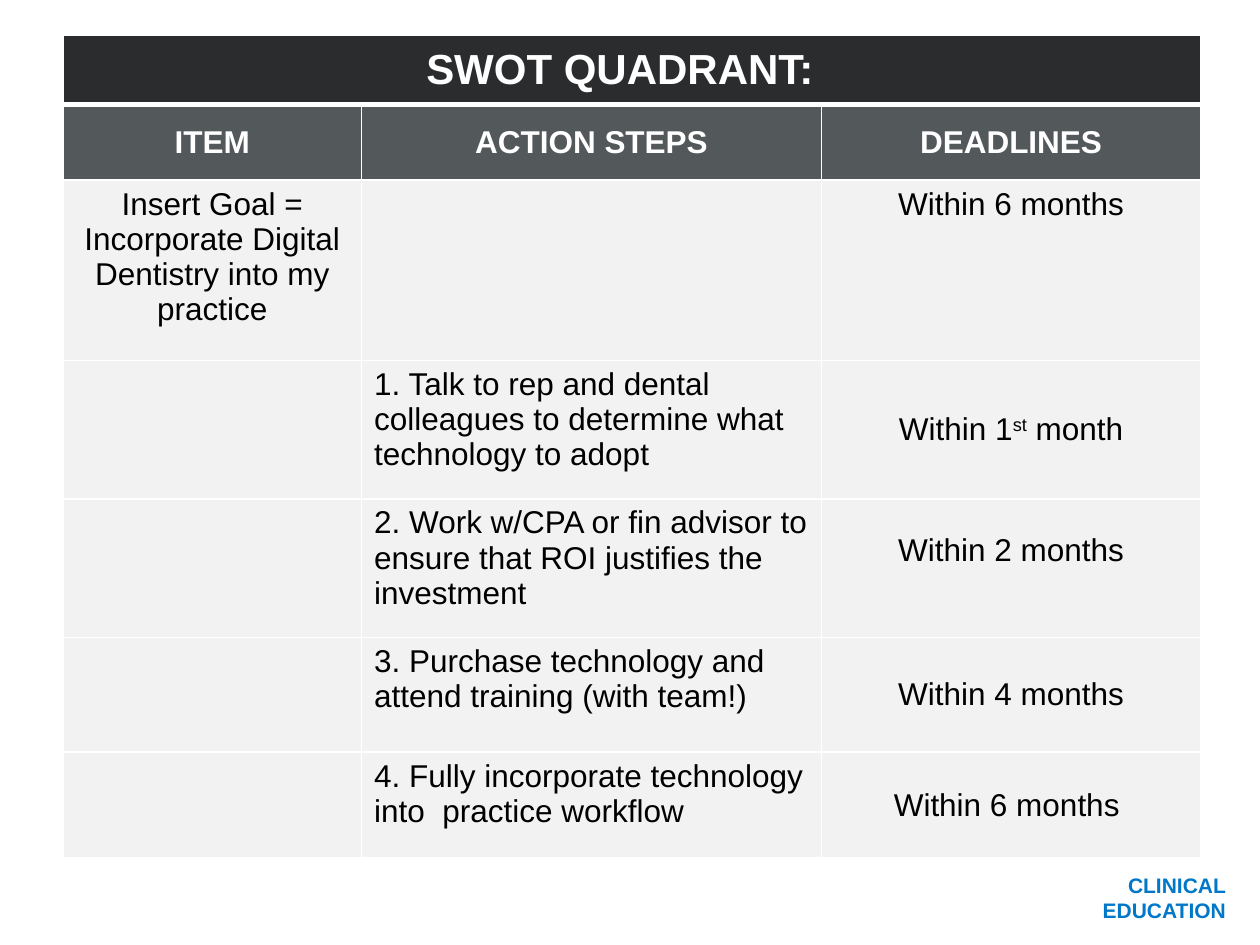
from lxml.etree import SubElement
from pptx import Presentation
from pptx.dml.color import RGBColor
from pptx.enum.text import MSO_ANCHOR, PP_ALIGN
from pptx.oxml.ns import qn
from pptx.util import Inches, Pt

WHITE = RGBColor(0xFF, 0xFF, 0xFF)
BLACK = RGBColor(0x00, 0x00, 0x00)
CHARCOAL = RGBColor(0x2A, 0x2C, 0x2E)
SLATE = RGBColor(0x53, 0x58, 0x5B)
PALE = RGBColor(0xF2, 0xF2, 0xF2)
BLUE = RGBColor(0x00, 0x77, 0xC8)

COLUMNS = [2.37, 3.65, 3.01]
HEIGHTS = [0.55, 0.6, 1.43, 1.1, 1.1, 0.91, 0.84]
ROWS = [
    ["SWOT QUADRANT:", "", ""],
    ["ITEM", "ACTION STEPS", "DEADLINES"],
    ["Insert Goal = Incorporate Digital Dentistry into my practice", "",
     "Within 6 months"],
    ["", "1. Talk to rep and dental colleagues to determine what technology "
     "to adopt", "Within 1^st^ month"],
    ["", "2. Work w/CPA or fin advisor to ensure that ROI justifies the "
     "investment", "Within 2 months"],
    ["", "3. Purchase technology and attend training (with team!)",
     "Within 4 months"],
    ["", "4. Fully incorporate technology into  practice workflow",
     "Within 6 months"],
]


def style_font(font, size, color, bold):
    font.name = "Arial"
    font.size = Pt(size)
    font.bold = bold
    font.color.rgb = color


def add_borders(cell, top, bottom):
    """Draw white borders; top and bottom are widths in points."""
    tc_pr = cell._tc.get_or_add_tcPr()
    for side, width in zip("LRTB", (1, 1, top, bottom)):
        ln = SubElement(tc_pr, qn(f"a:ln{side}"), w=str(Pt(width)))
        fill = SubElement(ln, qn("a:solidFill"))
        SubElement(fill, qn("a:srgbClr"), val=str(WHITE))


prs = Presentation()
prs.slide_width, prs.slide_height = Inches(10), Inches(7.5)
s = prs.slides.add_slide(prs.slide_layouts[6])

# Footer
footer = s.shapes.add_textbox(Inches(5.12), Inches(6.92), Inches(4.61), Inches(0.41))
tf = footer.text_frame
tf.word_wrap = True
tf.vertical_anchor = MSO_ANCHOR.MIDDLE
tf.margin_left = tf.margin_right = tf.margin_top = tf.margin_bottom = 0
tf.text = "CLINICAL\nEDUCATION"
for p in tf.paragraphs:
    p.alignment = PP_ALIGN.RIGHT
    style_font(p.font, 12, BLUE, True)

# Action plan table
table = s.shapes.add_table(len(ROWS), len(COLUMNS), Inches(0.5), Inches(0.28),
                           Inches(sum(COLUMNS)), Inches(sum(HEIGHTS))).table
for column, width in zip(table.columns, COLUMNS):
    column.width = Inches(width)
for row, height in zip(table.rows, HEIGHTS):
    row.height = Inches(height)
table.cell(0, 0).merge(table.cell(0, 2))

for i, texts in enumerate(ROWS):
    header = i < 2
    for j, text in enumerate(texts):
        cell = table.cell(i, j)
        add_borders(cell, 3 if i == 1 else 1, 3 if i == 0 else 1)
        cell.fill.solid()
        cell.fill.fore_color.rgb = (CHARCOAL, SLATE)[i] if header else PALE
        if header or (j == 2 and i > 2):
            cell.vertical_anchor = MSO_ANCHOR.MIDDLE
        p = cell.text_frame.paragraphs[0]
        p.alignment = PP_ALIGN.LEFT if j == 1 and not header else PP_ALIGN.CENTER
        style_font(p.font, 24 if i == 0 else 18, WHITE if header else BLACK, header)
        # Text between carets is superscript
        for k, part in enumerate(text.split("^") if text else []):
            r = p.add_run()
            r.text = part
            if k % 2:
                r.font._element.set("baseline", "30000")

# Nudge three texts off centre
table.cell(0, 0).margin_right = Inches(0.29)
table.cell(4, 2).margin_bottom = Inches(0.33)
table.cell(6, 2).margin_right = Inches(0.17)

prs.save("out.pptx")
